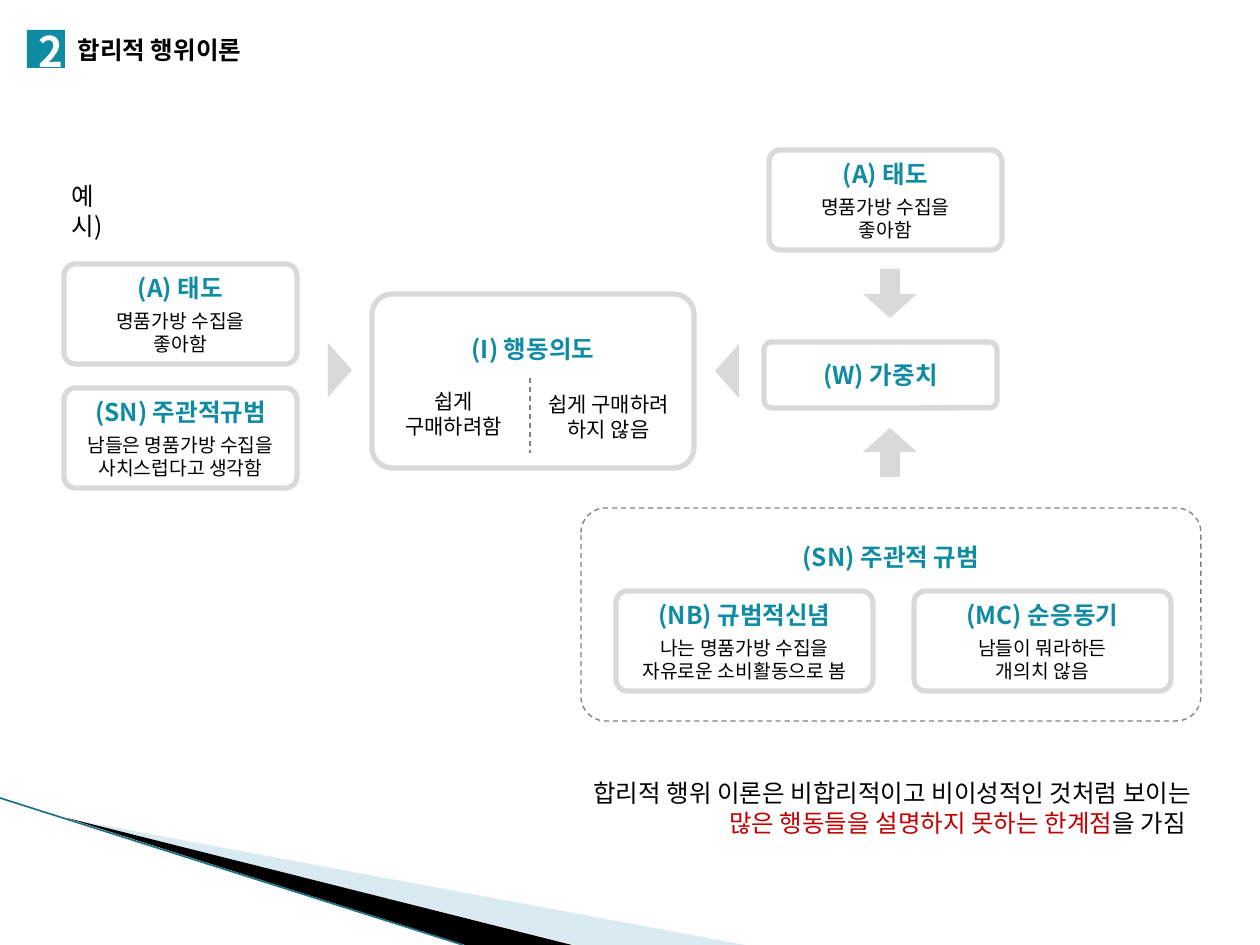
from lxml import etree
from pptx import Presentation
from pptx import util as u
from pptx.dml.color import RGBColor
from pptx.enum import dml, shapes, text
from pptx.oxml.ns import qn

SCALE = 914400 / 126  # EMU per px
FONT = "Noto Sans CJK KR"
TEAL, GREY, BLACK, WHITE = "108BA4", "D9D9D9", "000000", "FFFFFF"
RED, DASH, SWOOSH, EDGE = "C00000", "808080", "A0CBDC", "1B7388"
LEFT, CENTER, RIGHT = text.PP_ALIGN.LEFT, text.PP_ALIGN.CENTER, text.PP_ALIGN.RIGHT
SHAPE = shapes.MSO_SHAPE


def px(*values):
    return [u.Emu(round(value * SCALE)) for value in values]


def color(code):
    return RGBColor.from_string(code)


def add_span(para, words, size=14, ink=BLACK, bold=False):
    span = para.add_run()
    span.text = words
    span.font.size, span.font.bold = u.Pt(size), bold
    span.font.name = FONT
    span.font.color.rgb = color(ink)
    # Korean glyphs take the East Asian typeface
    etree.SubElement(span.font._element, qn("a:ea"), typeface=FONT)


def write(frame, *lines, align=LEFT, anchor=text.MSO_ANCHOR.TOP, wrap=True):
    """Each line is a list of (words, span format) pairs."""
    frame.word_wrap, frame.vertical_anchor = wrap, anchor
    for index, line in enumerate(lines):
        para = frame.add_paragraph() if index else frame.paragraphs[0]
        para.alignment = align
        for words, style in line:
            add_span(para, words, **style)


class Board:
    heading = dict(size=14, ink=TEAL, bold=True)

    def __init__(self, slide):
        self.slide = slide
        self.shapes = slide.shapes

    def paint(self, shape, fill=None, line=None, width=3.0, dashed=False):
        shape.shadow.inherit = False
        if fill:
            shape.fill.solid()
            shape.fill.fore_color.rgb = color(fill)
        else:
            shape.fill.background()
        if line:
            self.stroke(shape.line, line, width, dashed)
        else:
            shape.line.fill.background()
        return shape

    def stroke(self, line, ink, width, dashed):
        line.color.rgb = color(ink)
        line.width = u.Pt(width)
        if dashed:
            line.dash_style = dml.MSO_LINE.DASH

    def title(self, words, *place):
        box = self.shapes.title
        box.left, box.top, box.width, box.height = px(*place)
        write(box.text_frame, [(words, dict(bold=True))],
              anchor=text.MSO_ANCHOR.MIDDLE)

    def block(self, kind, *place, turn=0):
        shape = self.shapes.add_shape(kind, *px(*place))
        shape.rotation = turn
        return self.paint(shape, GREY)

    def frame(self, place, line=GREY, width=3.0, dashed=False):
        shape = self.shapes.add_shape(SHAPE.ROUNDED_RECTANGLE, *px(*place))
        shape.adjustments[0] = 0.116
        return self.paint(shape, None, line, width, dashed)

    def card(self, place, head, *details):
        body = self.frame(place).text_frame
        lines = [[(detail, dict(size=11))] for detail in details]
        write(body, [(head, self.heading)], *lines, align=CENTER,
              anchor=text.MSO_ANCHOR.MIDDLE)
        if details:
            body.paragraphs[1].line_spacing = 1.3

    def panel(self, place, head, inset, **style):
        body = self.frame(place, **style).text_frame
        body.margin_top, = px(inset)
        write(body, [(head, self.heading)], align=CENTER)

    def label(self, place, *lines, margin=None, **layout):
        body = self.shapes.add_textbox(*px(*place)).text_frame
        if margin is not None:
            body.margin_left = body.margin_right = margin
            body.margin_top = body.margin_bottom = margin
        write(body, *lines, **layout)

    def line(self, *ends, ink, width, dashed=False):
        line = self.shapes.add_connector(shapes.MSO_CONNECTOR.STRAIGHT, *px(*ends))
        self.stroke(line.line, ink, width, dashed)
        etree.SubElement(line._element.spPr, qn("a:effectLst"))

    def outline(self, points, fill, alpha=100):
        builder = self.shapes.build_freeform(*points[0], scale=SCALE)
        builder.add_line_segments(points[1:], close=True)
        shape = self.paint(builder.convert_to_shape(), fill)
        if alpha < 100:
            tint = shape._element.spPr.find(qn("a:solidFill"))[0]
            etree.SubElement(tint, qn("a:alpha"), val=str(alpha * 1000))


def main():
    deck = Presentation()
    deck.slide_width, deck.slide_height = px(1260, 945)
    board = Board(deck.slides.add_slide(deck.slide_layouts[5]))

    # Corner decoration
    board.outline([(69, 819), (745, 945), (575, 945)], SWOOSH, alpha=40)
    board.outline([(67, 818), (572, 945), (465, 945)], BLACK)
    board.line(0, 798, 463, 945, ink=EDGE, width=0.95)

    # Numbered title
    board.title("합리적 행위이론", 65, 28, 342, 43)
    badge = board.block(SHAPE.RECTANGLE, 27, 30, 38, 38)
    board.paint(badge, TEAL)
    board.label((39, 26, 24, 50), [("2", dict(size=24, ink=WHITE, bold=True))],
                margin=0)

    # Cards
    attitude = ("(A) 태도", "명품가방 수집을", "좋아함")
    board.card((64, 264, 233, 100), *attitude)
    board.card((64, 388, 233, 100), "(SN) 주관적규범",
               "남들은 명품가방 수집을", "사치스럽다고 생각함")
    board.card((769, 150, 233, 100), *attitude)
    board.card((764, 342, 233, 66), "(W) 가중치")
    board.card((616, 591, 257, 100), "(NB) 규범적신념",
               "나는 명품가방 수집을", "자유로운 소비활동으로 봄")
    board.card((914, 591, 257, 100), "(MC) 순응동기",
               "남들이 뭐라하든", "개의치 않음")

    # Panels
    board.panel((581, 508, 620, 213), "(SN) 주관적 규범", 27,
                line=DASH, width=0.75, dashed=True)
    board.panel((372, 294, 322, 174), "(I) 행동의도", 34)

    # Arrows
    for left, top, turn in ((313, 358, 90), (700, 359, 270),
                            (863, 294, 180), (863, 428, 0)):
        board.block(SHAPE.ISOSCELES_TRIANGLE, left, top, 54, 24, turn=turn)
    for top in (269, 442):
        board.block(SHAPE.RECTANGLE, 880, top, 20, 35)

    # Two outcomes of the intention
    for place, lines in (((391, 382, 125, 64), ("쉽게", "구매하려함")),
                         ((533, 385, 151, 64), ("쉽게 구매하려", "하지 않음"))):
        board.label(place, *[[(line, dict(size=12))] for line in lines],
                    align=CENTER, wrap=False)
    board.line(530, 378, 530, 453, ink=DASH, width=0.75, dashed=True)

    # Example tag and conclusion
    board.label((59, 175, 72, 72), [("예시)", {})])
    board.label((556, 772, 648, 72),
                [("합리적 행위 이론은 비합리적이고 비이성적인 것처럼 보이는", {})],
                [("많은 행동들을 설명하지 못하는 한계점", dict(ink=RED)),
                 ("을 가짐 ", {})],
                align=RIGHT, wrap=False)

    deck.save("out.pptx")


if __name__ == "__main__":
    main()
